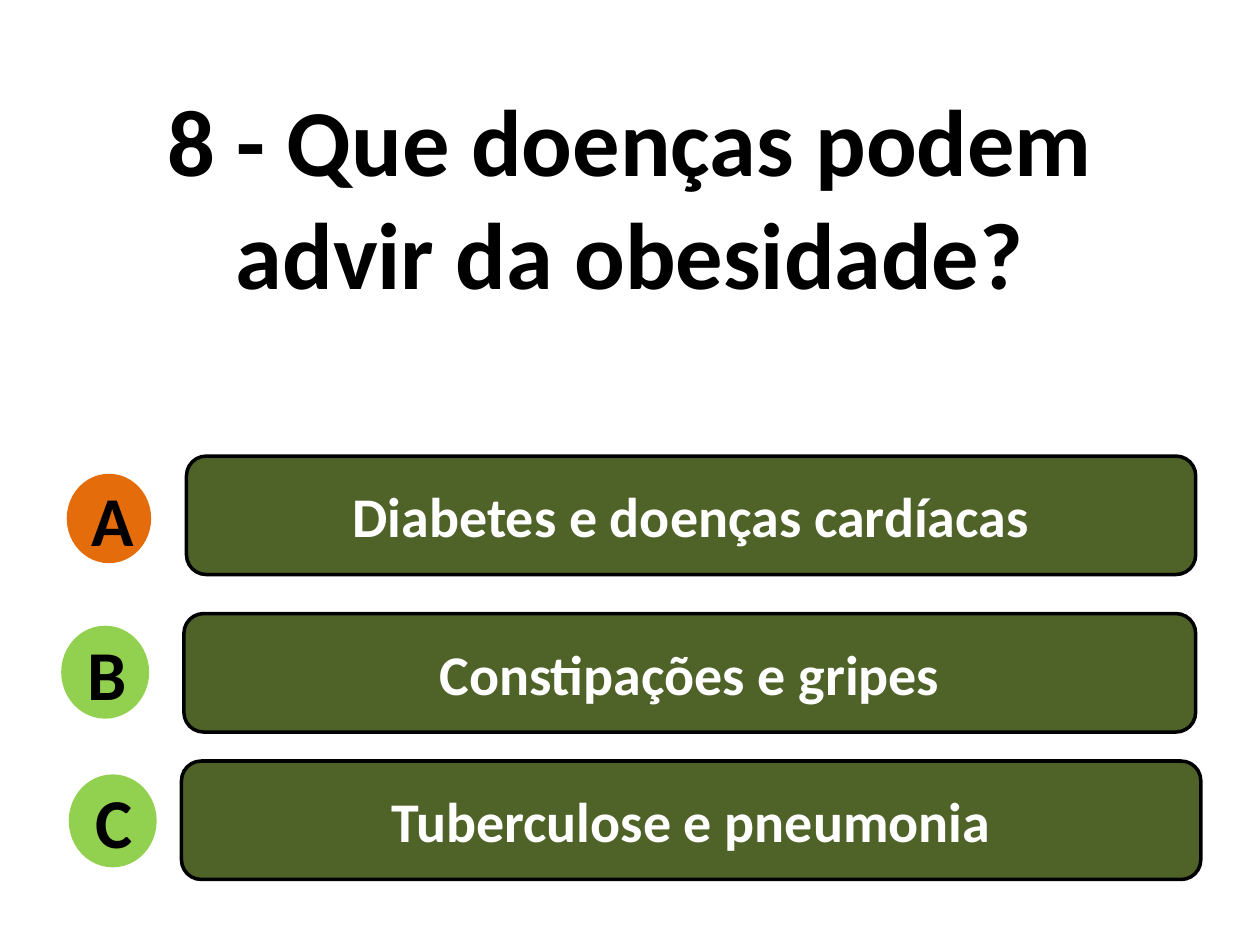
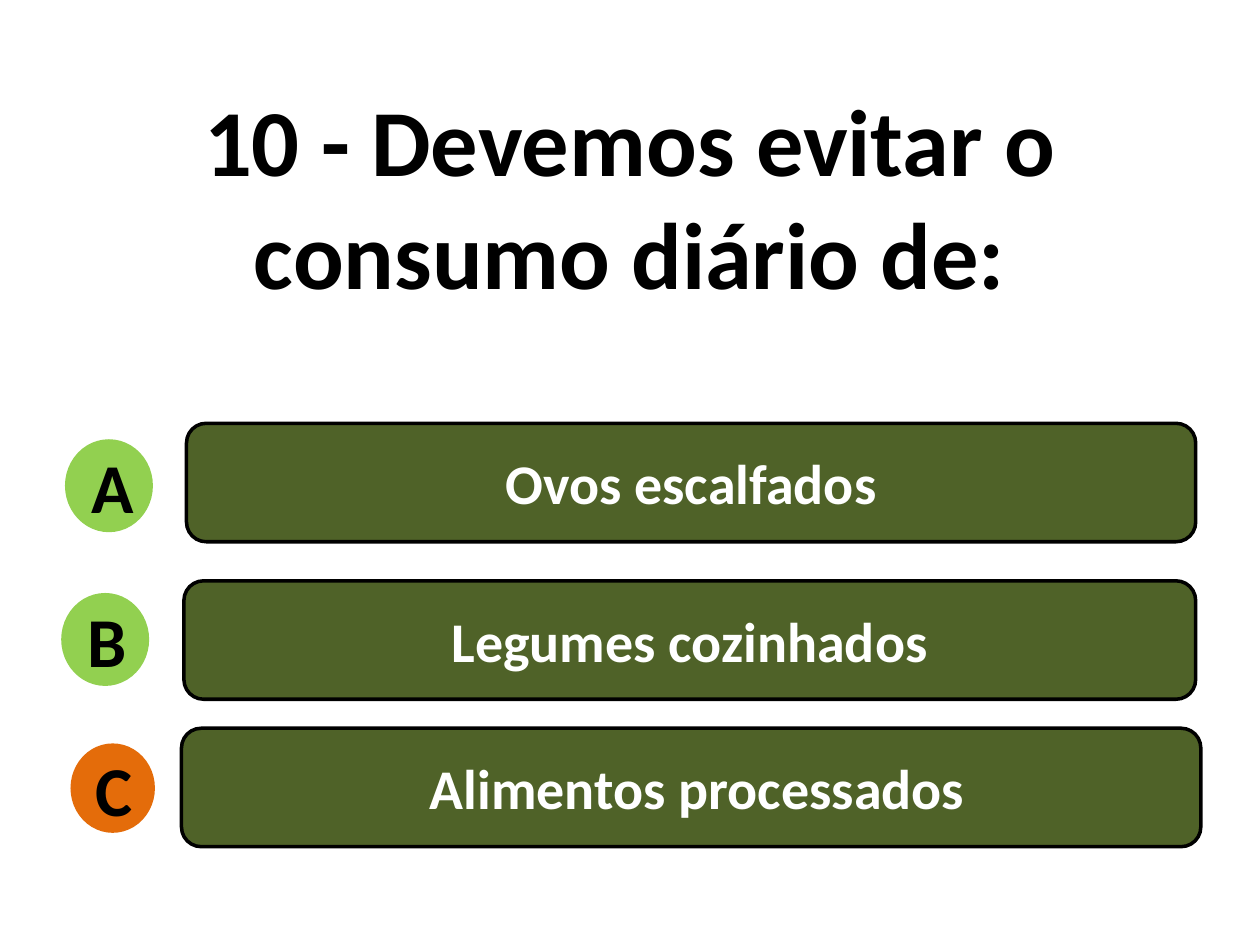
from pptx import Presentation
from pptx.dml.color import RGBColor
from pptx.enum.shapes import MSO_SHAPE as Shape
from pptx.enum.text import MSO_ANCHOR as Anchor, PP_ALIGN as Align
from pptx.util import Inches, Pt

BLACK = RGBColor(0x00, 0x00, 0x00)
WHITE = RGBColor(0xFF, 0xFF, 0xFF)
OLIVE = RGBColor(0x4F, 0x62, 0x28)
LIME = RGBColor(0x92, 0xD0, 0x50)
ORANGE = RGBColor(0xE4, 0x6C, 0x0A)

QUIZ = [
    ("8 - Que doenças podem advir da obesidade?", 3.62, "A",
     ["Diabetes e doenças cardíacas", "Constipações e gripes", "Tuberculose e pneumonia"]),
    ("10 - Devemos evitar o consumo diário de:", 3.36, "C",
     ["Ovos escalfados", "Legumes cozinhados", " Alimentos processados"]),
]
ROWS = [
    ("A", 0, 1.48, 8.01, 0.53, 0.14),
    ("B", 1.25, 1.46, 8.03, 0.5, 0.11),
    ("C", 2.42, 1.44, 8.09, 0.56, 0.12),
]


def write(box, text, size, color=BLACK, anchor=Anchor.MIDDLE):
    frame = box.text_frame
    frame.word_wrap = True
    frame.vertical_anchor = anchor
    line = frame.paragraphs[0]
    line.alignment = Align.CENTER
    run = line.add_run()
    run.text = text
    font = run.font
    font.name = "Calibri"
    font.size = Pt(size)
    font.bold = True
    font.color.rgb = color


def draw(slide, kind, left, top, width, height, fill, edge):
    item = slide.shapes.add_shape(
        kind, Inches(left), Inches(top), Inches(width), Inches(height))
    item.shadow.inherit = False
    item.fill.solid()
    item.fill.fore_color.rgb = fill
    if edge is None:
        item.line.fill.background()
    else:
        item.line.color.rgb = edge
        item.line.width = Pt(2)
    return item


deck = Presentation()
deck.slide_width = Inches(10)
deck.slide_height = Inches(7.5)

for title, top, right, answers in QUIZ:
    slide = deck.slides.add_slide(deck.slide_layouts[6])
    head = slide.shapes.add_textbox(Inches(0.67), Inches(0.6), Inches(8.66), Inches(1.92))
    write(head, title, 54, anchor=Anchor.TOP)
    for (mark, down, left, width, spot, drop), answer in zip(ROWS, answers):
        bar = draw(slide, Shape.FLOWCHART_ALTERNATE_PROCESS,
                   left, top + down, width, 0.94, OLIVE, BLACK)
        write(bar, answer, 32, color=WHITE)
        fill, edge = (ORANGE, None) if mark == right else (LIME, LIME)
        disc = draw(slide, Shape.OVAL, spot, top + down + drop, 0.67, 0.71, fill, edge)
        write(disc, mark, 40)

deck.save("out.pptx")
